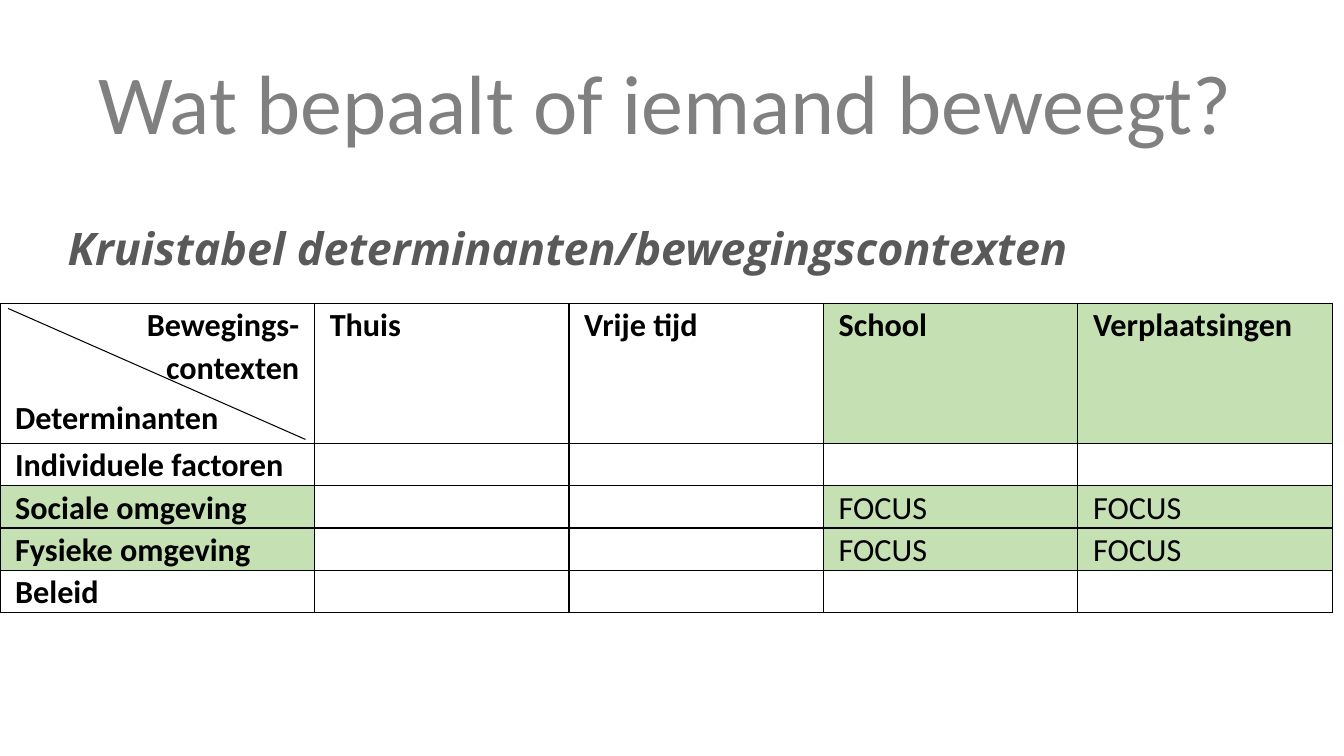
"""Build the slide with the cross table of determinants and movement contexts."""
from dataclasses import dataclass

import lxml.etree
import pptx
import pptx.dml.color
import pptx.enum.shapes
import pptx.enum.text
import pptx.oxml.ns
import pptx.presentation
import pptx.shapes.autoshape
import pptx.slide
import pptx.table
import pptx.text.text
import pptx.util

Align = pptx.enum.text.PP_ALIGN
Anchor = pptx.enum.text.MSO_ANCHOR
RGBColor = pptx.dml.color.RGBColor

BLACK = RGBColor(0x00, 0x00, 0x00)
TITLE_GREY = RGBColor(0x80, 0x80, 0x80)
SUBTITLE_GREY = RGBColor(0x59, 0x59, 0x59)
FOCUS_GREEN = RGBColor(0xC5, 0xE0, 0xB3)

SLIDE_WIDTH = pptx.util.Inches(13.33)
SLIDE_HEIGHT = pptx.util.Inches(7.5)
TABLE_TOP = 40.13
LABEL_COLUMN, CONTEXT_COLUMN = 23.41, 18.93
HEADER_ROW, DETERMINANT_ROW = 18.53, 5.47

CONTEXTS = ("Thuis", "Vrije tijd", "School", "Verplaatsingen")
DETERMINANTS = ("Individuele factoren", "Sociale omgeving", "Fysieke omgeving", "Beleid")
FOCUS_CONTEXTS = {"School", "Verplaatsingen"}
FOCUS_DETERMINANTS = {"Sociale omgeving", "Fysieke omgeving"}


@dataclass(frozen=True)
class TextStyle:
    font: str
    size: float
    color: RGBColor
    bold: bool = False
    italic: bool = False


@dataclass(frozen=True)
class Heading:
    text: str
    style: TextStyle
    left: float
    top: float
    width: float
    height: float
    align: Align
    anchor: Anchor
    side_inset: float
    top_inset: float


@dataclass(frozen=True)
class CellContent:
    lines: tuple[tuple[str, Align], ...] = ()
    bold: bool = True
    focus: bool = False


HEADINGS = (
    Heading("Wat bepaalt of iemand beweegt?", TextStyle("Calibri", 60, TITLE_GREY),
            4.43, 6, 90.1, 14.8, Align.CENTER, Anchor.MIDDLE, 0.75, 0.67),
    Heading("Kruistabel determinanten/bewegingscontexten",
            TextStyle("Open Sans", 32, SUBTITLE_GREY, True, True),
            4.43, 20.8, 86.27, 28.93, Align.LEFT, Anchor.TOP, 0.6, 8.33),
)


def across(percent: float) -> pptx.util.Emu:
    """Return a share of the slide's width."""
    return pptx.util.Emu(round(SLIDE_WIDTH * percent / 100))


def down(percent: float) -> pptx.util.Emu:
    """Return a share of the slide's height."""
    return pptx.util.Emu(round(SLIDE_HEIGHT * percent / 100))


def add_run(paragraph: pptx.text.text._Paragraph, text: str, style: TextStyle) -> None:
    """Add one styled run to a paragraph."""
    run = paragraph.add_run()
    run.text = text
    run.font.name = style.font
    run.font.size = pptx.util.Pt(style.size)
    run.font.bold = style.bold
    run.font.italic = style.italic
    run.font.color.rgb = style.color


def add_heading(slide: pptx.slide.Slide, heading: Heading) -> None:
    """Draw a heading in its own text box."""
    shape = slide.shapes.add_textbox(across(heading.left), down(heading.top),
                                     across(heading.width), down(heading.height))
    frame = shape.text_frame
    frame.word_wrap = True
    frame.vertical_anchor = heading.anchor
    frame.margin_left = frame.margin_right = across(heading.side_inset)
    frame.margin_top = down(heading.top_inset)
    paragraph = frame.paragraphs[0]
    paragraph.alignment = heading.align
    add_run(paragraph, heading.text, heading.style)


def add_borders(cell: pptx.table._Cell) -> None:
    """Give a cell a thin black line on every side."""
    properties = cell._tc.get_or_add_tcPr()
    qualified = pptx.oxml.ns.qn
    for side in ("a:lnL", "a:lnR", "a:lnT", "a:lnB"):
        line = lxml.etree.SubElement(properties, qualified(side), w=str(pptx.util.Pt(1)))
        fill = lxml.etree.SubElement(line, qualified("a:solidFill"))
        lxml.etree.SubElement(fill, qualified("a:srgbClr"), val=str(BLACK))


def fill_cell(cell: pptx.table._Cell, content: CellContent) -> None:
    """Write a cell's text and set its borders and fill."""
    cell.margin_left = cell.margin_right = across(1.13)
    cell.margin_top = cell.margin_bottom = 0
    add_borders(cell)
    if content.focus:
        cell.fill.solid()
        cell.fill.fore_color.rgb = FOCUS_GREEN
    else:
        cell.fill.background()
    frame = cell.text_frame
    for index, (text, align) in enumerate(content.lines):
        paragraph = frame.add_paragraph() if index else frame.paragraphs[0]
        paragraph.alignment = align
        paragraph.line_spacing = 1.07
        paragraph.space_after = pptx.util.Pt(6)
        add_run(paragraph, text, TextStyle("Calibri", 23, BLACK, content.bold))


def build_contents() -> list[list[CellContent]]:
    """Combine the determinants and contexts into rows of cells."""
    corner = CellContent((("Bewegings-contexten", Align.RIGHT), ("Determinanten", Align.LEFT)))
    rows = [[corner] + [CellContent(((name, Align.LEFT),), focus=name in FOCUS_CONTEXTS)
                        for name in CONTEXTS]]
    focus_cell = CellContent((("FOCUS", Align.LEFT),), bold=False, focus=True)
    for name in DETERMINANTS:
        focus = name in FOCUS_DETERMINANTS
        label = CellContent(((name, Align.LEFT),), focus=focus)
        rows.append([label] + [focus_cell if focus and context in FOCUS_CONTEXTS else CellContent()
                               for context in CONTEXTS])
    return rows


def add_cross_table(slide: pptx.slide.Slide) -> None:
    """Draw the cross table."""
    widths = [LABEL_COLUMN] + [CONTEXT_COLUMN] * len(CONTEXTS)
    heights = [HEADER_ROW] + [DETERMINANT_ROW] * len(DETERMINANTS)
    table = slide.shapes.add_table(len(heights), len(widths), 0, down(TABLE_TOP),
                                   across(sum(widths)), down(sum(heights))).table
    table.first_row = table.horz_banding = False
    for column, width in zip(table.columns, widths):
        column.width = across(width)
    for row, height, contents in zip(table.rows, heights, build_contents()):
        row.height = down(height)
        for cell, content in zip(row.cells, contents):
            fill_cell(cell, content)


def add_corner_diagonal(slide: pptx.slide.Slide) -> None:
    """Draw the line that splits the corner cell."""
    diagonal = slide.shapes.add_connector(pptx.enum.shapes.MSO_CONNECTOR.STRAIGHT,
                                          across(0.6), down(40.8), across(22.73), down(58.13))
    diagonal.line.color.rgb = BLACK
    diagonal.line.width = pptx.util.Pt(0.75)
    lxml.etree.SubElement(diagonal._element.spPr, pptx.oxml.ns.qn("a:effectLst"))


def main() -> None:
    """Build and save the presentation."""
    presentation = pptx.Presentation()
    presentation.slide_width = SLIDE_WIDTH
    presentation.slide_height = SLIDE_HEIGHT
    slide = presentation.slides.add_slide(presentation.slide_layouts[6])
    add_cross_table(slide)
    add_corner_diagonal(slide)
    for heading in HEADINGS:
        add_heading(slide, heading)
    presentation.save("out.pptx")


if __name__ == "__main__":
    main()
